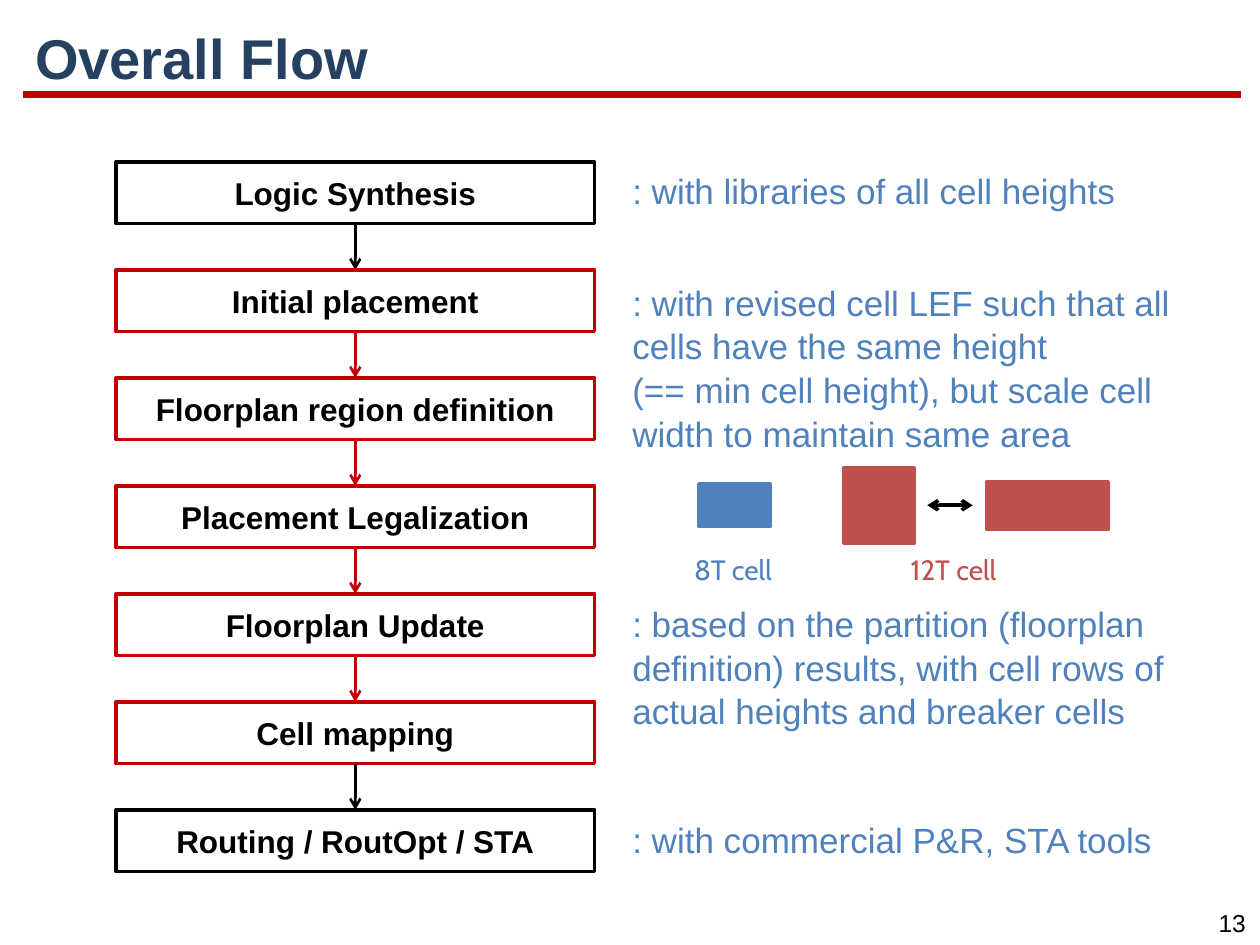
import pptx
import pptx.util
import pptx.dml.color
import pptx.enum.shapes
import pptx.enum.text
import pptx.oxml

RGB = pptx.dml.color.RGBColor
NAVY = RGB(0x25, 0x40, 0x61)
RED = RGB(0xC0, 0x00, 0x00)
BLACK = RGB(0x00, 0x00, 0x00)
BLUE = RGB(0x4F, 0x81, 0xBD)
BRICK = RGB(0xC0, 0x50, 0x4D)

ALIGN = pptx.enum.text.PP_ALIGN
MIDDLE = pptx.enum.text.MSO_ANCHOR.MIDDLE
RECT = pptx.enum.shapes.MSO_SHAPE.RECTANGLE
STRAIGHT = pptx.enum.shapes.MSO_CONNECTOR.STRAIGHT
NS = 'xmlns:a="http://schemas.openxmlformats.org/drawingml/2006/main"'

COLS, ROWS = 100, 75


class Deck:
    """Style and current slide; lengths are grid columns and rows."""

    def __init__(self):
        self.prs = pptx.Presentation()
        self.prs.slide_width = pptx.util.Inches(10)
        self.prs.slide_height = pptx.util.Inches(7.5)
        self.slide = self.prs.slides.add_slide(self.prs.slide_layouts[6])

    def grid(self, *spans):
        """Turn alternating columns and rows into slide lengths."""
        units = (self.prs.slide_width / COLS, self.prs.slide_height / ROWS)
        return [pptx.util.Emu(round(span * units[i % 2]))
                for i, span in enumerate(spans)]

    def label(self, shape, text, color, size=20, name="Arial", bold=False,
              wrap=True, **para):
        shape.text_frame.word_wrap = wrap
        line = shape.text_frame.paragraphs[0]
        line.text = text
        for key, value in para.items():
            setattr(line, key, value)
        style = {"name": name, "size": pptx.util.Pt(size), "bold": bold}
        for run in line.runs:
            for key, value in style.items():
                setattr(run.font, key, value)
            run.font.color.rgb = color

    def text(self, spot, text, color, anchor=None, **style):
        box = self.slide.shapes.add_textbox(*self.grid(*spot))
        box.text_frame.vertical_anchor = anchor
        self.label(box, text, color, **style)

    def rect(self, spot, color, text="", solid=False):
        box = self.slide.shapes.add_shape(RECT, *self.grid(*spot))
        box.shadow.inherit = False
        box.line.color.rgb = color
        box.line.width = pptx.util.Pt(2)
        if solid:
            box.fill.solid()
            box.fill.fore_color.rgb = color
        else:
            box.fill.background()
        if text:
            box.text_frame.vertical_anchor = MIDDLE
            self.label(box, text, BLACK, size=18, bold=True,
                       alignment=ALIGN.CENTER)

    def line(self, ends, color, width, tips=()):
        link = self.slide.shapes.add_connector(STRAIGHT, *self.grid(*ends))
        link.line.color.rgb = color
        link.line.width = pptx.util.Pt(width)
        props = link._element.spPr
        for tip in tips:
            props.find(pptx.oxml.ns.qn("a:ln")).append(
                pptx.oxml.parse_xml(f'<a:{tip} {NS} type="arrow"/>'))
        props.append(pptx.oxml.parse_xml(f"<a:effectLst {NS}/>"))


def main():
    deck = Deck()

    # Title, rule and page number
    deck.line((1.8, 7.5, 98.5, 7.5), RED, 4.5)
    deck.text((95.6, 71.6, 4.4, 3.4), "13", BLACK, size=14, wrap=False,
              alignment=ALIGN.CENTER)
    deck.text((1.8, 1.6, 96.8, 6.5), "Overall Flow", NAVY, anchor=MIDDLE,
              size=32, bold=True, line_spacing=0.9)

    # Flow steps, each with an arrow to the next
    steps = [
        ("Logic Synthesis", BLACK),
        ("Initial placement", RED),
        ("Floorplan region definition", RED),
        ("Placement Legalization", RED),
        ("Floorplan Update", RED),
        ("Cell mapping", RED),
        ("Routing / RoutOpt / STA", BLACK),
    ]
    left, top, wide, high, pitch = 9.2, 12.85, 38, 4.9, 8.57
    mid, last = left + wide / 2, len(steps) - 1
    for i, (name, color) in enumerate(steps):
        y = top + i * pitch
        deck.rect((left, y, wide, high), color, name)
        if i < last:
            hue = BLACK if i in (0, last - 1) else RED
            deck.line((mid, y + high, mid, y + pitch), hue, 1.5, ["tailEnd"])

    # Notes beside the steps: top, width, height, wording
    notes = [
        (12.8, 44.7, 4.9, ": with libraries of all cell heights"),
        (21.7, 44.7, 19.4, ": with revised cell LEF such that all cells have "
         "the same height \n(== min cell height), but scale cell width to "
         "maintain same area"),
        (47.2, 44.7, 15.2, ": based on the partition (floorplan definition) "
         "results, with cell rows of actual heights and breaker cells"),
        (64.3, 46.9, 5.2, ": with commercial P&R, STA tools"),
    ]
    for y, width, height, text in notes:
        deck.text((49.2, y, width, height), text, BLUE, line_spacing=1.04)

    # Cell sketch: all cells share one centre line
    axis = 40.1
    cells = [(55.5, 5.6, 3.4, BLUE), (67, 5.6, 6, BRICK),
             (78.3, 9.7, 3.8, BRICK)]
    for x, width, height, color in cells:
        deck.rect((x, axis - height / 2, width, height), color, solid=True)
    deck.line((73.6, axis, 77.2, axis), BLACK, 2, ["headEnd", "tailEnd"])
    for x, width, text, color in [(54.1, 8.5, "8T cell", BLUE),
                                  (71.3, 9.7, "12T cell", BRICK)]:
        deck.text((x, 43.4, width, 3.7), text, color, size=16, name="Cabin")

    deck.prs.save("out.pptx")


if __name__ == "__main__":
    main()
